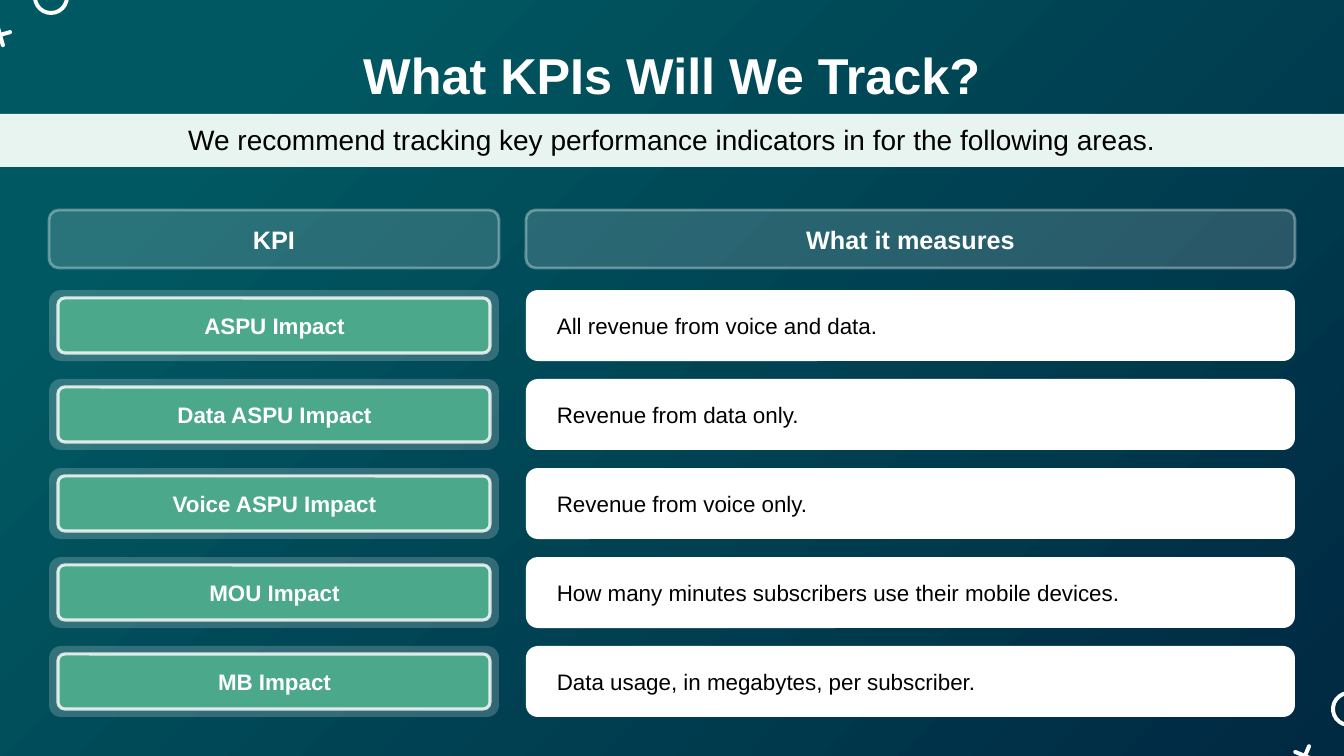
from lxml.etree import SubElement
from pptx import Presentation
from pptx.dml.color import RGBColor
from pptx.enum.shapes import MSO_SHAPE
from pptx.enum.text import MSO_ANCHOR, PP_ALIGN
from pptx.oxml import parse_xml
from pptx.oxml.ns import nsdecls, qn
from pptx.util import Pt

PX = 12192000 / 1344
RECT, ROUND, RING = MSO_SHAPE.RECTANGLE, MSO_SHAPE.ROUNDED_RECTANGLE, MSO_SHAPE.DONUT
WHITE, BLACK, MINT, GREEN = "FFFFFF", "000000", "E8F4F0", "4CA88A"


def panel(home, kind, area, fill, alpha=100, line=None, adj=None, turn=0):
    """Draw a filled shape; line is (width in points, opacity in percent), in white."""
    shape = home.add_shape(kind, *[round(n * PX) for n in area])
    shape.shadow.inherit = False
    shape.rotation = turn
    if adj is not None:
        shape.adjustments[0] = adj
    paints = [(shape.fill, fill, alpha)]
    if line:
        shape.line.width = Pt(line[0])
        paints.append((shape.line.fill, WHITE, line[1]))
    else:
        shape.line.fill.background()
    for paint, color, part in paints:
        paint.solid()
        paint.fore_color.rgb = RGBColor.from_string(color)
        if part < 100:
            node = paint._xPr.find(qn("a:solidFill"))[0]
            SubElement(node, qn("a:alpha"), val=str(part * 1000))
    return shape


def label(home, area, text, size, color, bold=False, align=PP_ALIGN.CENTER,
          anchor=MSO_ANCHOR.MIDDLE):
    box = home.add_textbox(*[round(n * PX) for n in area])
    frame = box.text_frame
    frame.word_wrap = True
    frame.vertical_anchor = anchor
    para = frame.paragraphs[0]
    para.alignment = align
    run = para.add_run()
    run.text = text
    font = run.font
    font.name, font.size, font.bold = "Arial", Pt(size), bold
    font.color.rgb = RGBColor.from_string(color)


deck = Presentation()
deck.slide_width, deck.slide_height = round(1344 * PX), round(756 * PX)
slide = deck.slides.add_slide(deck.slide_layouts[6])
shapes = slide.shapes

# Backdrop, dark towards the bottom right
back = panel(shapes, RECT, (0, 0, 1344, 756), "005962")
solid = back.fill._xPr.find(qn("a:solidFill"))
solid.getparent().replace(solid, parse_xml(
    f'<a:gradFill {nsdecls("a")} rotWithShape="1"><a:gsLst>'
    '<a:gs pos="0"><a:srgbClr val="002942"/></a:gs>'
    '<a:gs pos="85000"><a:srgbClr val="005962"/></a:gs>'
    '<a:gs pos="100000"><a:srgbClr val="005962"/></a:gs></a:gsLst>'
    '<a:path path="circle"><a:fillToRect l="100000" t="100000"/></a:path></a:gradFill>'))

# Corner marks: a ring and a cross, given by their centres
for ring, cross, turn in [((51, -3), (0, 35), 344.2), ((1349, 709), (1305, 756), 112.5)]:
    group = shapes.add_group_shape().shapes
    for kind, (x, y), w, h, adj in [(RING, ring, 36, 36, 0.11),
                                    (ROUND, cross, 4, 25, 0.5),
                                    (ROUND, cross, 25, 4, 0.5)]:
        panel(group, kind, (x - w / 2, y - h / 2, w, h), WHITE, adj=adj, turn=turn)

# Heading
panel(shapes, RECT, (0, 114, 1344, 53), MINT)
label(shapes, (49, 39, 1246, 65), "What KPIs Will We Track?", 36, WHITE, True,
      anchor=MSO_ANCHOR.TOP)
label(shapes, (49, 118, 1246, 46),
      "We recommend tracking key performance indicators in for the following areas.",
      20, BLACK, anchor=MSO_ANCHOR.TOP)

# Column heads
for x, w, inset, text in [(49, 450, 20, "KPI"), (526, 769, 21, "What it measures")]:
    panel(shapes, ROUND, (x, 210, w, 58), WHITE, 16, (2, 34))
    label(shapes, (x + inset, 220, w - 2 * inset, 38), text, 18, WHITE, True)

# One row for each KPI
rows = [
    ("ASPU Impact", "All revenue from voice and data."),
    ("Data ASPU Impact", "Revenue from data only."),
    ("Voice ASPU Impact", "Revenue from voice only."),
    ("MOU Impact", "How many minutes subscribers use their mobile devices."),
    ("MB Impact", "Data usage, in megabytes, per subscriber."),
]
for i, (name, gauge) in enumerate(rows):
    top = 290 + 89 * i
    panel(shapes, ROUND, (526, top, 769, 71), WHITE)
    label(shapes, (547, top + 17, 726, 37), gauge, 16, BLACK, align=PP_ALIGN.LEFT)
    group = shapes.add_group_shape().shapes
    panel(group, ROUND, (49, top, 450, 71), WHITE, 20)
    panel(group, ROUND, (58, top + 8, 432, 55), GREEN, line=(2.25, 82), adj=0.124)
    label(group, (94, top + 17, 361, 37), name, 16, WHITE, True)

deck.save("out.pptx")
